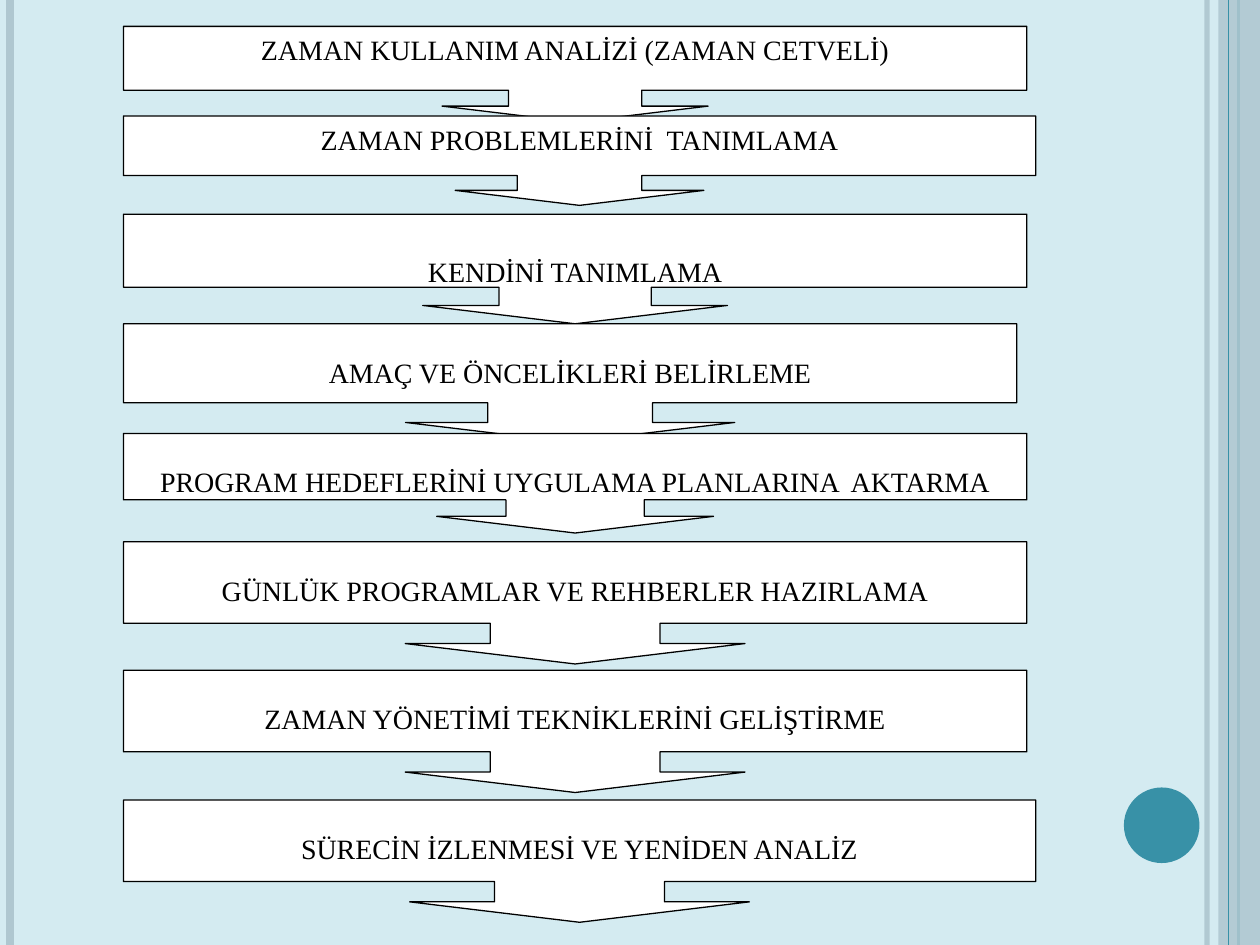
from dataclasses import dataclass

from lxml.etree import SubElement
from pptx import Presentation
from pptx.dml.color import RGBColor
from pptx.enum.shapes import MSO_CONNECTOR, MSO_SHAPE
from pptx.enum.text import MSO_ANCHOR, PP_ALIGN
from pptx.oxml.ns import qn
from pptx.util import Inches, Pt

COLORS = {
    "background": "D4EBF1",
    "pale": "AFC7D0",
    "teal": "3891A7",
    "white": "FFFFFF",
    "black": "000000",
}
SLIDE_WIDTH, SLIDE_HEIGHT = 10, 7.5
STEP_LEFT = 0.98


@dataclass
class Stripe:
    x: float
    color: str
    weight: float
    opacity: int = 100


@dataclass
class Step:
    text: str
    top: float
    width: float
    height: float
    text_inset: float = 0.25


LEFT_STRIPES = [
    Stripe(9.58, "pale", 3, 93),
    Stripe(0.08, "pale", 4.5),
    Stripe(9.83, "teal", 1.5),
]
BAND_STRIPE = Stripe(9.75, "teal", 0.75)

STEPS = [
    Step("ZAMAN KULLANIM ANALİZİ (ZAMAN CETVELİ)", 0.21, 7.17, 0.76, 0.05),
    Step("ZAMAN PROBLEMLERİNİ  TANIMLAMA", 0.92, 7.24, 0.71, 0.05),
    Step("KENDİNİ TANIMLAMA", 1.7, 7.17, 0.87, 0.32),
    Step("AMAÇ VE ÖNCELİKLERİ BELİRLEME", 2.57, 7.09, 0.94),
    Step("PROGRAM HEDEFLERİNİ UYGULAMA PLANLARINA  AKTARMA", 3.44, 7.17, 0.79),
    Step("GÜNLÜK PROGRAMLAR VE REHBERLER HAZIRLAMA", 4.3, 7.17, 0.97),
    Step("ZAMAN YÖNETİMİ TEKNİKLERİNİ GELİŞTİRME", 5.32, 7.17, 0.97),
    Step("SÜRECİN İZLENMESİ VE YENİDEN ANALİZ", 6.35, 7.24, 0.97),
]


def rgb(name: str) -> RGBColor:
    return RGBColor.from_string(COLORS[name])


def set_opacity(shape, percent: int) -> None:
    """Make the first solid colour of the shape partly transparent."""
    color = next(shape._element.spPr.iter(qn("a:srgbClr")))
    SubElement(color, qn("a:alpha"), val=str(percent * 1000))


def add_stripe(page, stripe: Stripe) -> None:
    x = Inches(stripe.x)
    line = page.shapes.add_connector(MSO_CONNECTOR.STRAIGHT, x, 0, x, Inches(SLIDE_HEIGHT))
    line.line.color.rgb = rgb(stripe.color)
    line.line.width = Pt(stripe.weight)
    if stripe.opacity < 100:
        set_opacity(line, stripe.opacity)
    SubElement(line._element.spPr, qn("a:effectLst"))


def add_filled(page, kind, left: float, top: float, width: float, height: float, color: str):
    """Add a preset shape with a solid fill, no outline and no shadow."""
    shape = page.shapes.add_shape(
        kind, Inches(left), Inches(top), Inches(width), Inches(height)
    )
    shape.shadow.inherit = False
    shape.fill.solid()
    shape.fill.fore_color.rgb = rgb(color)
    shape.line.fill.background()
    return shape


def add_step(page, step: Step) -> None:
    callout = add_filled(
        page, MSO_SHAPE.DOWN_ARROW_CALLOUT,
        STEP_LEFT, step.top, step.width, step.height, "white",
    )
    for index, value in enumerate((1.39, 1.39, 0.167, 0.667)):
        callout.adjustments[index] = value
    callout.line.color.rgb = rgb("black")
    callout.line.width = Pt(0.75)

    frame = callout.text_frame
    frame.word_wrap = True
    frame.vertical_anchor = MSO_ANCHOR.TOP
    frame.margin_top = Inches(step.text_inset)
    frame.margin_bottom = 0
    para = frame.paragraphs[0]
    para.text = step.text
    para.alignment = PP_ALIGN.CENTER
    para.font.name = "Times New Roman"
    para.font.size = Pt(16)
    para.font.color.rgb = rgb("black")


def add_frame(page) -> None:
    """Draw the stripes, the right-hand band and the disc."""
    for stripe in LEFT_STRIPES:
        add_stripe(page, stripe)
    band = add_filled(page, MSO_SHAPE.RECTANGLE, 9.67, 0, 0.33, SLIDE_HEIGHT, "pale")
    set_opacity(band, 87)
    add_stripe(page, BAND_STRIPE)
    add_filled(page, MSO_SHAPE.OVAL, 8.92, 6.25, 0.6, 0.6, "teal")


def main() -> None:
    deck = Presentation()
    deck.slide_width = Inches(SLIDE_WIDTH)
    deck.slide_height = Inches(SLIDE_HEIGHT)
    page = deck.slides.add_slide(deck.slide_layouts[6])
    page.background.fill.solid()
    page.background.fill.fore_color.rgb = rgb("background")
    add_frame(page)
    for step in STEPS:
        add_step(page, step)
    deck.save("out.pptx")


if __name__ == "__main__":
    main()
